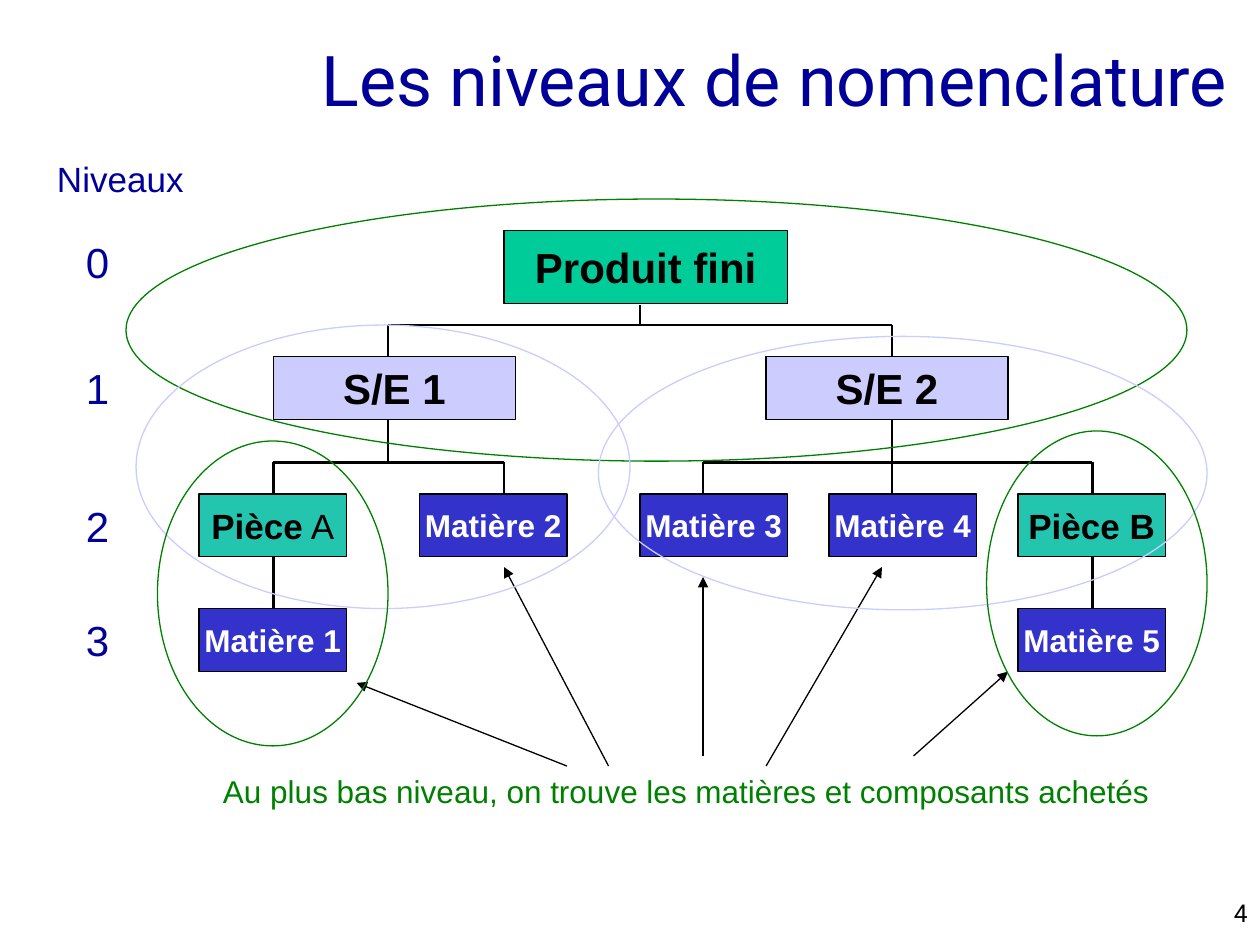
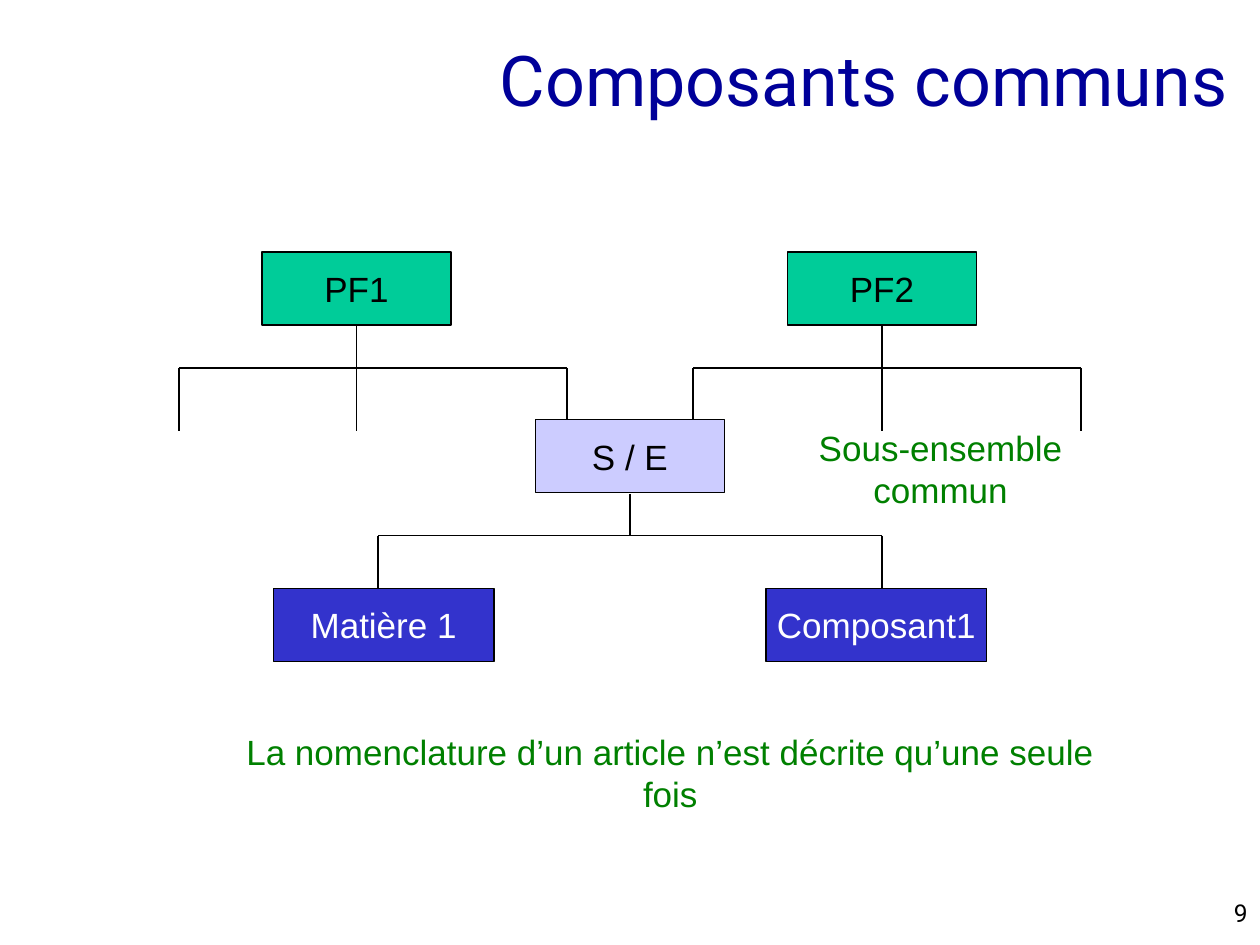
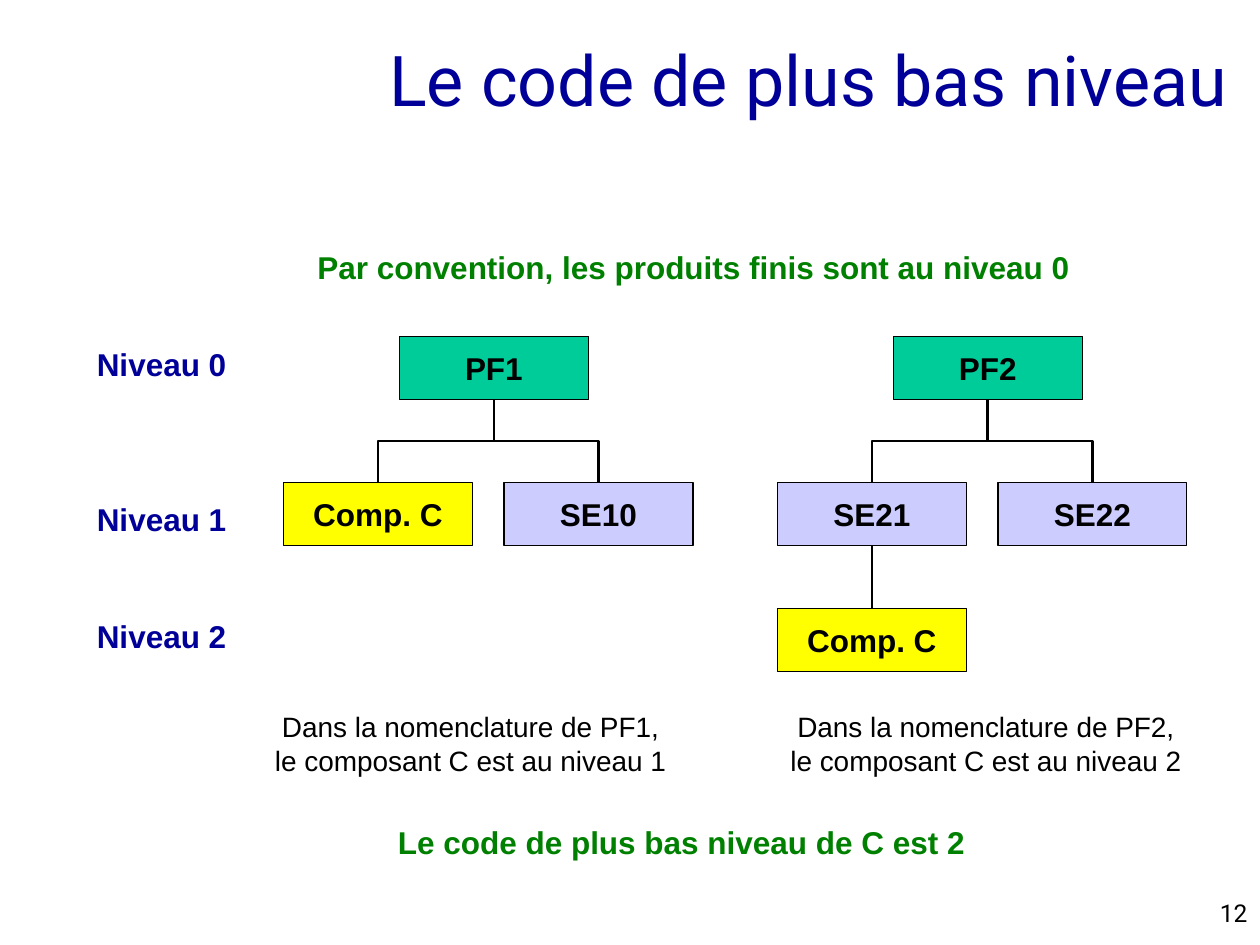
from dataclasses import dataclass

from lxml.etree import SubElement
from pptx import Presentation
from pptx.dml.color import RGBColor
from pptx.enum.shapes import MSO_CONNECTOR, MSO_SHAPE
from pptx.enum.text import MSO_ANCHOR, MSO_AUTO_SIZE, PP_ALIGN
from pptx.oxml.ns import qn
from pptx.util import Inches, Pt

COLOURS = {
    "navy": "000099",
    "black": "000000",
    "white": "FFFFFF",
    "note": "008000",
    "product": "00CC99",
    "assembly": "CCCCFF",
    "part": "23C5AE",
    "material": "3333CC",
    "shared": "FFFF00",
}
BODY_FONT = "Arial"
TITLE_FONT = "Roboto"


def colour(name):
    """Return the named palette colour."""
    return RGBColor.from_string(COLOURS[name])


def write(para, text, size, ink="black", bold=False, font=BODY_FONT):
    """Add one formatted run to a paragraph."""
    span = para.add_run()
    span.text = text
    span.font.name = font
    span.font.size = Pt(size)
    span.font.bold = bold
    span.font.color.rgb = colour(ink)


@dataclass
class Region:
    """An area of a page whose parts are placed from its top left corner."""

    page: object
    left: float
    top: float

    def place(self, x, y):
        """Turn a point of the region into a point of the page."""
        return Inches(self.left + x), Inches(self.top + y)

    def outline(self, kind, x, y, width, height, line, fill=None):
        """Draw a thin preset shape with an optional fill."""
        shape = self.page.shapes.add_shape(
            kind, *self.place(x, y), Inches(width), Inches(height))
        shape.shadow.inherit = False
        shape.line.color.rgb = colour(line)
        shape.line.width = Pt(0.75)
        if fill:
            shape.fill.solid()
            shape.fill.fore_color.rgb = colour(fill)
        else:
            shape.fill.background()
        return shape

    def node(self, text, kind, x, y, width, height, size, bold=True, plain_tail=""):
        """Draw an item box coloured by its kind."""
        shape = self.outline(MSO_SHAPE.RECTANGLE, x, y, width, height, "black", kind)
        frame = shape.text_frame
        frame.word_wrap = False
        frame.vertical_anchor = MSO_ANCHOR.MIDDLE
        para = frame.paragraphs[0]
        para.alignment = PP_ALIGN.CENTER
        ink = "white" if kind == "material" else "black"
        write(para, text, size, ink, bold)
        if plain_tail:
            write(para, plain_tail, size, ink)

    def label(self, lines, x, y, width, height, size, ink="note", bold=False,
              align=PP_ALIGN.CENTER, wrap=False, font=BODY_FONT, anchor=MSO_ANCHOR.MIDDLE):
        """Write free text, one paragraph for each line."""
        box = self.page.shapes.add_textbox(
            *self.place(x, y), Inches(width), Inches(height))
        frame = box.text_frame
        frame.word_wrap = wrap
        frame.vertical_anchor = anchor
        if wrap:
            frame.margin_left = frame.margin_right = Inches(0.15)
        for index, text in enumerate(lines):
            para = frame.add_paragraph() if index else frame.paragraphs[0]
            para.alignment = align
            write(para, text, size, ink, bold, font)

    def line(self, start, end, width, arrow=False, kind=MSO_CONNECTOR.STRAIGHT):
        """Draw a black connector between two points."""
        link = self.page.shapes.add_connector(
            kind, *self.place(*start), *self.place(*end))
        link.line.color.rgb = colour("black")
        link.line.width = Pt(width)
        properties = link.element.spPr
        if arrow:
            SubElement(properties.find(qn("a:ln")), qn("a:tailEnd"), type="triangle")
        SubElement(properties, qn("a:effectLst"))
        return link

    def fork(self, trunk, bus, ends, width):
        """Join a parent to its children by a trunk, a bus and drops."""
        x = trunk[0]
        columns = [end[0] for end in ends]
        self.line((min(columns), bus), (max(columns), bus), width)
        self.line(trunk, (x, bus), width)
        for end in ends:
            self.line((end[0], bus), end, width)

    def elbow(self, start, end, width):
        """Draw a bent connector that leaves and arrives vertically."""
        drop, span = end[1] - start[1], abs(end[0] - start[0])
        middle_x, middle_y = (start[0] + end[0]) / 2, (start[1] + end[1]) / 2
        near, far = middle_x - drop / 2, middle_x + drop / 2
        angle = 90
        if end[0] > start[0]:
            near, far, angle = far, near, 270
        link = self.line((near, middle_y - span / 2), (far, middle_y + span / 2),
                         width, kind=MSO_CONNECTOR.ELBOW)
        link.element.spPr.find(qn("a:xfrm")).set("rot", str(angle * 60000))


def add_page(deck, heading, number):
    """Add a page with its title and page number."""
    page = deck.slides.add_slide(deck.slide_layouts[5])
    title = page.shapes.title
    title.left, title.top = Inches(0.17), Inches(0)
    title.width, title.height = Inches(9.67), Inches(1.25)
    frame = title.text_frame
    frame.auto_size = MSO_AUTO_SIZE.NONE
    frame.vertical_anchor = MSO_ANCHOR.MIDDLE
    para = frame.paragraphs[0]
    para.alignment = PP_ALIGN.RIGHT
    write(para, heading, 40, "navy", font=TITLE_FONT)
    Region(page, 7.92, 7.08).label([str(number)], 0, 0, 2.08, 0.25, 14, "black",
                                   align=PP_ALIGN.RIGHT, font=TITLE_FONT,
                                   anchor=MSO_ANCHOR.TOP)
    return page


def level_scale(region, rows):
    """Number the levels beside the tree."""
    region.label(["Niveaux"], -0.23, -0.63, 1.21, 0.43, 20, "navy")
    for level, y in enumerate(rows):
        region.label([str(level)], 0, y, 0.39, 0.5, 24, "navy")


def level_tree(region, rows):
    """Draw the four-level tree of a finished product."""
    region.node("Produit fini", "product", 2.42, rows[0], 2.25, 0.58, 24)
    for text, x in (("S/E 1", 0.59), ("S/E 2", 4.5)):
        region.node(text, "assembly", x, rows[1], 1.92, 0.5, 24)
    for text, tail, x in (("Pièce", " A", 0), ("Pièce B", "", 6.5)):
        region.node(text, "part", x, rows[2], 1.17, 0.5, 20, plain_tail=tail)
    materials = ((0, 3), (1.75, 2), (3.5, 2), (5, 2), (6.5, 3))
    for index, (x, level) in enumerate(materials, 1):
        region.node(f"Matière {index}", "material", x, rows[level], 1.17, 0.5, 18)
    forks = (
        ((3.5, 0.59), 0.75, rows[1], (1.5, 5.5)),
        ((1.5, 1.5), 1.84, rows[2], (0.59, 2.42)),
        ((5.5, 1.5), 1.84, rows[2], (4, 5.5, 7.09)),
    )
    for trunk, bus, bottom, columns in forks:
        region.fork(trunk, bus, [(x, bottom) for x in columns], 1.5)
    for x in (0.59, 7.09):
        region.line((x, 2.59), (x, rows[3]), 1.5)


def purchased_note(region):
    """Point from the note to each purchased material."""
    region.label(["Au plus bas niveau, on trouve les matières et composants achetés"],
                 0.09, 4.25, 7.55, 0.4, 18)
    arrows = (
        ((2.92, 4.25), (1.25, 3.59)),
        ((3.25, 4.25), (2.42, 2.67)),
        ((4, 4.17), (4, 2.75)),
        ((4.5, 4.25), (5.42, 2.67)),
        ((5.67, 4.17), (6.42, 3.5)),
    )
    for start, end in arrows:
        region.line(start, end, 0.75, arrow=True)


def family_rings(region):
    """Ring each parent together with its children."""
    rings = (
        ("note", -0.58, -0.25, 8.42, 2.08),
        ("assembly", -0.5, 0.75, 3.92, 2.25),
        ("assembly", 3.17, 0.84, 4.83, 2.17),
        ("note", -0.33, 1.67, 1.83, 2.42),
        ("note", 6.25, 1.59, 1.75, 2.42),
    )
    for ink, *box in rings:
        region.outline(MSO_SHAPE.OVAL, *box, ink)


def common_tree(region):
    """Draw two products that share one assembly."""
    nodes = (
        ("PF1", "product", 0.66, 0, 1.5),
        ("PF2", "product", 4.83, 0, 1.5),
        ("S / E", "assembly", 2.83, 1.33, 1.5),
        ("Matière 1", "material", 0.75, 2.67, 1.75),
        ("Composant1", "material", 4.66, 2.67, 1.75),
    )
    for text, kind, x, y, width in nodes:
        region.node(text, kind, x, y, width, 0.58, 20, bold=False)
    forks = (
        ((1.41, 0.58), 0.92, ((0, 1.42), (1.41, 1.42), (3.08, 1.33))),
        ((5.58, 0.58), 0.92, ((4.08, 1.33), (5.58, 1.42), (7.16, 1.42))),
        ((3.58, 1.92), 2.25, ((1.58, 2.67), (5.58, 2.67))),
    )
    for trunk, bus, ends in forks:
        region.fork(trunk, bus, ends, 0.75)
    region.label(["Sous-ensemble commun"], 4.41, 1.5, 3.27, 0.43, 20, wrap=True)
    region.label(["La nomenclature d’un article n’est décrite qu’une seule fois"],
                 0.19, 3.92, 7.42, 0.43, 20, wrap=True)


def product_tree(region, product, children, grandchild=None):
    """Draw a product, its two children and an optional grandchild."""
    size = (1.5, 0.5, 18)
    region.node(product, "product", 0.92, 0, *size)
    for x, (text, kind) in zip((0, 1.75), children):
        region.node(text, kind, x, 1.16, *size)
        region.elbow((1.67, 0.5), (x + 0.75, 1.16), 1.5)
    if grandchild:
        region.node(grandchild, "shared", 0, 2.16, *size)
        region.line((0.75, 1.66), (0.75, 2.16), 1.5)


def lowest_level_texts(region):
    """Write the level names, captions and conclusions."""
    for level, y in enumerate((0.77, 2, 2.93)):
        region.label([f"Niveau {level}"], 0, y, 1.23, 0.4, 18, "navy", True,
                     PP_ALIGN.LEFT)
    region.label(["Par convention, les produits finis sont au niveau 0"],
                 1.75, 0, 6.17, 0.4, 18, bold=True)
    for index, x in enumerate((1.41, 5.5), 1):
        region.label([f"Dans la nomenclature de PF{index},",
                      f"le composant C est au niveau {index}"],
                     x, 3.66, 3.31, 0.64, 16, "black")
    region.label(["Le code de plus bas niveau de C est 2"],
                 2.39, 4.56, 4.7, 0.4, 18, bold=True)


def main():
    """Build and save the deck."""
    deck = Presentation()
    deck.slide_width, deck.slide_height = Inches(10), Inches(7.5)

    page = add_page(deck, "Les niveaux de nomenclature", 4)
    rows = (0, 1, 2.09, 3)
    tree = Region(page, 1.58, 1.83)
    level_tree(tree, rows)
    level_scale(Region(page, 0.58, 1.83), rows)
    purchased_note(tree)
    family_rings(tree)

    page = add_page(deck, "Composants communs", 9)
    common_tree(Region(page, 1.42, 2))

    page = add_page(deck, "Le code de plus bas niveau", 12)
    product_tree(Region(page, 2.25, 2.67), "PF1",
                 (("Comp. C", "shared"), ("SE10", "assembly")))
    product_tree(Region(page, 6.17, 2.67), "PF2",
                 (("SE21", "assembly"), ("SE22", "assembly")), "Comp. C")
    lowest_level_texts(Region(page, 0.67, 1.92))

    deck.save("out.pptx")


if __name__ == "__main__":
    main()
